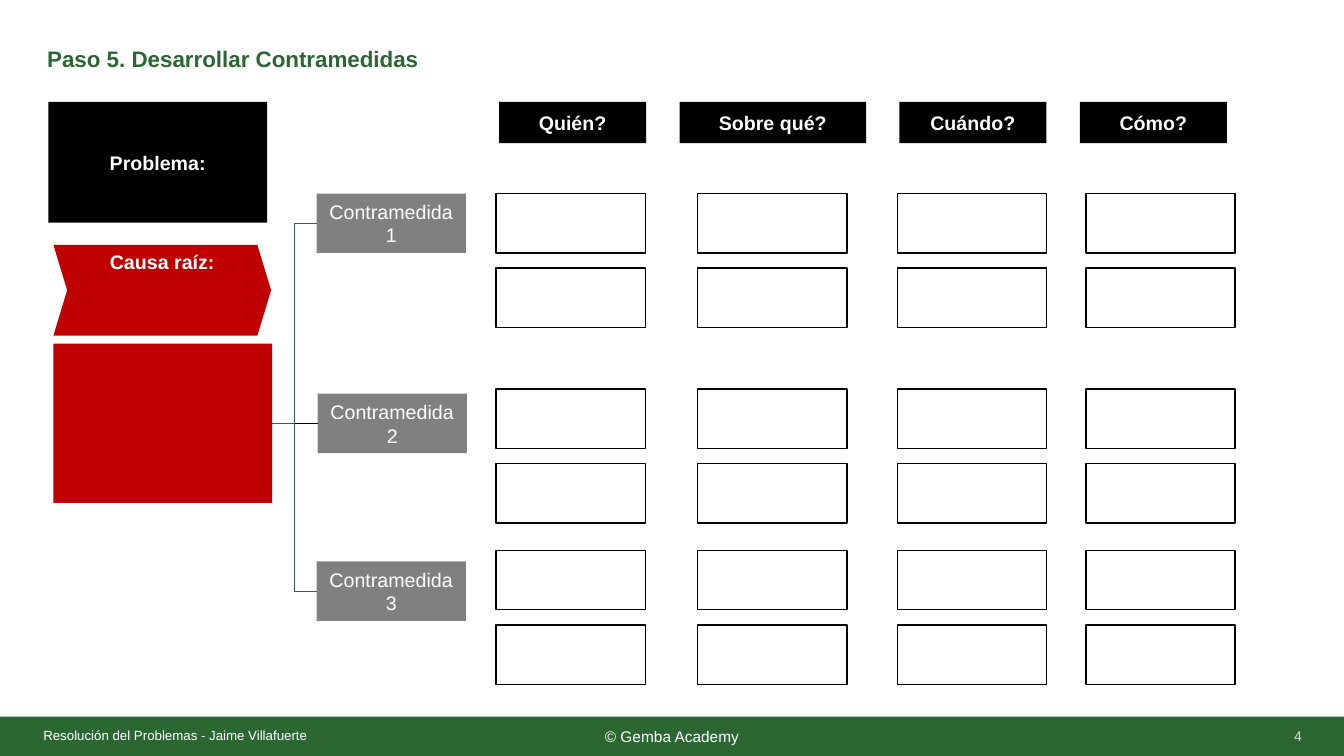
from dataclasses import dataclass

from lxml.etree import SubElement
from pptx import Presentation
from pptx.dml.color import RGBColor
from pptx.enum.shapes import MSO_CONNECTOR as Link, MSO_SHAPE as Shape
from pptx.enum.text import MSO_ANCHOR as Anchor, PP_ALIGN as Align
from pptx.oxml.ns import qn
from pptx.util import Inches, Pt

GRID = 0.1  # inches in one column or row of the page grid


@dataclass(frozen=True)
class Theme:
    font: str = "Arial"
    green: str = "2B6633"
    red: str = "C00000"
    gray: str = "808080"
    black: str = "000000"
    white: str = "FFFFFF"
    pale: str = "D9D9D9"
    branch: str = "3A5A62"
    title: float = 16
    label: float = 14
    footer: float = 11
    number: float = 10
    author: float = 9.5
    outline: float = 1
    hairline: float = 0.5


def write(box, text, *, size, color, bold=False, align=Align.CENTER,
          anchor=Anchor.MIDDLE, spacing=None, inset=None, font="Arial"):
    frame = box.text_frame
    frame.word_wrap = True
    frame.vertical_anchor = anchor
    if inset is not None:
        frame.margin_left = frame.margin_right = inset
        frame.margin_top = frame.margin_bottom = inset
    para = frame.paragraphs[0]
    para.alignment = align
    if spacing:
        para.line_spacing = spacing
    span = para.add_run()
    span.text = text
    span.font.name = font
    span.font.size = Pt(size)
    span.font.bold = bold
    span.font.color.rgb = RGBColor.from_string(color)


class Page:
    """Places elements by grid columns and rows, in one theme."""

    def __init__(self, slide, theme):
        self.shapes = slide.shapes
        self.theme = theme

    def cells(self, *lengths):
        return [Inches(length * GRID) for length in lengths]

    def text(self, area, words, **style):
        box = self.shapes.add_textbox(*self.cells(*area))
        write(box, words, font=self.theme.font, **style)
        return box

    def block(self, area, fill=None, words=None, kind=Shape.RECTANGLE, **style):
        """Draw a filled shape, or an outlined one when there is no fill."""
        box = self.shapes.add_shape(kind, *self.cells(*area))
        box.shadow.inherit = False
        if fill:
            box.fill.solid()
            box.fill.fore_color.rgb = RGBColor.from_string(fill)
            box.line.fill.background()
        else:
            box.fill.background()
            box.line.color.rgb = RGBColor.from_string(self.theme.black)
            box.line.width = Pt(self.theme.outline)
        if words:
            look = dict(size=self.theme.label, color=self.theme.white) | style
            write(box, words, font=self.theme.font, **look)
        return box

    def join(self, source, target, kind, color):
        """Link the right side of source to the left side of target."""
        link = self.shapes.add_connector(kind, 0, 0, 0, 0)
        link.begin_connect(source, 3)
        link.end_connect(target, 1)
        link.line.color.rgb = RGBColor.from_string(color)
        link.line.width = Pt(self.theme.hairline)
        SubElement(link._element.spPr, qn("a:effectLst"))


def add_frame(page):
    theme = page.theme
    page.block((0, 71.1, 133.3, 3.9), theme.green, "© Gemba Academy", size=theme.footer)
    page.text((3.7, 3.4, 115, 5.2), "Paso 5. Desarrollar Contramedidas", size=theme.title,
              color=theme.green, bold=True, align=Align.LEFT, spacing=0.9)
    page.text((4.3, 71.7, 30, 2.4), "Resolución del Problemas - Jaime Villafuerte",
              size=theme.author, color=theme.white, align=Align.LEFT, inset=0)
    page.text((100.1, 71, 30, 4), "4", size=theme.number, color=theme.pale, align=Align.RIGHT)


def add_causes(page):
    theme = page.theme
    page.block((4.8, 10.1, 21.7, 12), theme.black, "Problema:", bold=True)
    chevron = page.block((5.3, 24.3, 21.6, 9), theme.red, "Causa raíz:", Shape.CHEVRON,
                         bold=True, anchor=Anchor.TOP)
    chevron.adjustments[0] = 0.152
    return page.block((5.3, 34.1, 21.7, 15.8), theme.red)


def add_countermeasures(page, cause):
    theme = page.theme
    places = [(31.4, 19.2), (31.5, 39.05), (31.4, 55.7)]
    for number, (left, top) in enumerate(places, 1):
        box = page.block((left, top, 14.8, 5.9), theme.gray, f"Contramedida {number}")
        if number == 2:
            page.join(cause, box, Link.STRAIGHT, theme.black)
        else:
            page.join(cause, box, Link.ELBOW, theme.branch)


def add_action_grid(page):
    headers = [("Quién?", 49.5, 14.6), ("Sobre qué?", 67.4, 18.5),
               ("Cuándo?", 89.2, 14.6), ("Cómo?", 107.1, 14.6)]
    for words, left, width in headers:
        page.block((left, 10.1, width, 4.1), page.theme.black, words, bold=True)
    for group_top in (19.2, 38.6, 54.6):
        for top in (group_top, group_top + 7.4):
            for left in (49.2, 69.2, 89, 107.7):
                page.block((left, top, 14.8, 5.9))


def main():
    deck = Presentation()
    deck.slide_width, deck.slide_height = Inches(13.33), Inches(7.5)
    page = Page(deck.slides.add_slide(deck.slide_layouts[6]), Theme())
    add_frame(page)
    cause = add_causes(page)
    add_countermeasures(page, cause)
    add_action_grid(page)
    deck.save("out.pptx")


if __name__ == "__main__":
    main()
